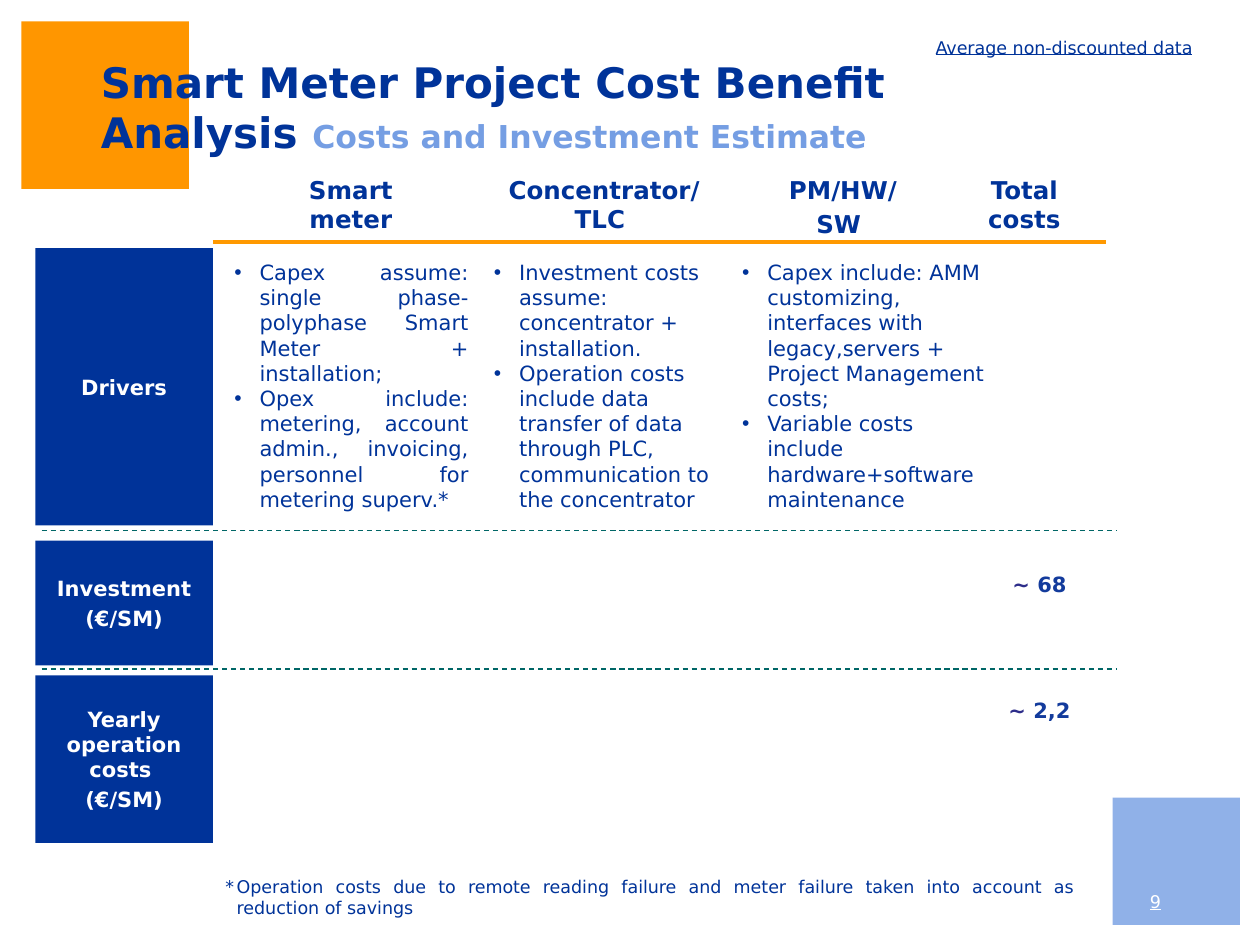
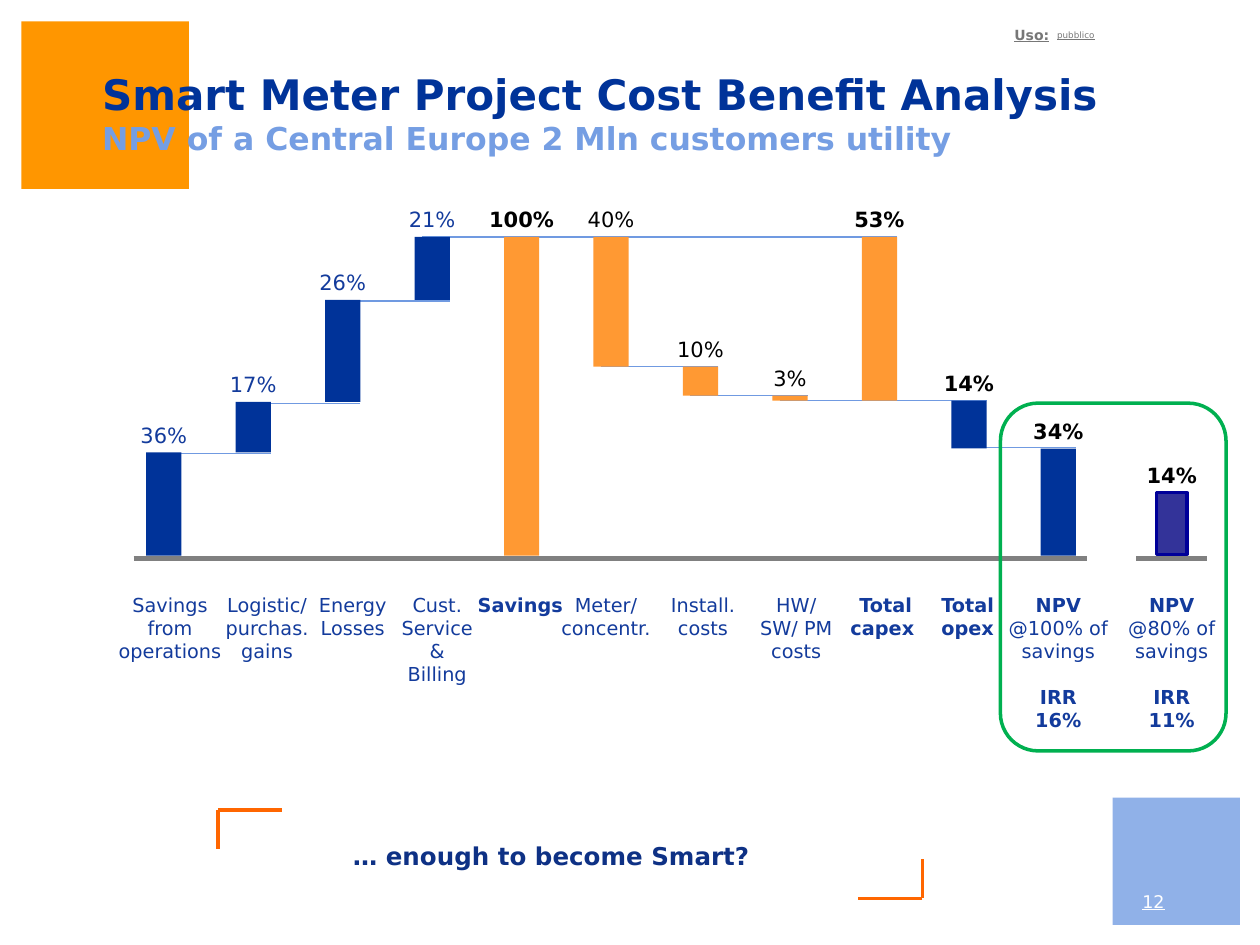
from dataclasses import dataclass

from lxml.etree import SubElement
from pptx import Presentation
from pptx.dml.color import RGBColor
from pptx.enum.dml import MSO_LINE
from pptx.enum.shapes import MSO_CONNECTOR, MSO_SHAPE as Shape
from pptx.enum.text import MSO_ANCHOR as Anchor, MSO_AUTO_SIZE as AutoSize, PP_ALIGN as Align
from pptx.oxml.ns import qn
from pptx.util import Inches, Pt


@dataclass(frozen=True)
class Theme:
    face: str = "DejaVu Sans"
    blue: str = "003399"
    sky: str = "759EE3"
    label: str = "133B9C"
    orange: str = "FF9600"
    rule: str = "FF9900"
    bar_orange: str = "FF9933"
    bracket: str = "FF6600"
    step: str = "709AE1"
    dash: str = "006666"
    axis: str = "808080"
    grey: str = "777777"
    indigo: str = "333399"
    navy: str = "000099"
    tilde: str = "2D2D8A"
    closing: str = "0E3185"
    green: str = "00B050"
    white: str = "FFFFFF"
    black: str = "000000"
    title: int = 24
    subtitle: int = 18
    head: int = 14
    body: int = 12
    category: int = 11
    small: int = 10


T = Theme()
BOLD, PLAIN = {"bold": True}, {"bold": False}
CENTRE = {"alignment": Align.CENTER}
NO_MARGIN = dict.fromkeys(("margin_left", "margin_right", "margin_top", "margin_bottom"), 0)
CELL_MARGIN = {"margin_left": Inches(0.06), "margin_right": Inches(0.06),
               "margin_top": Inches(0.01), "margin_bottom": Inches(0.01)}

# ---- Content -------------------------------------------------------------
TITLE = "Smart Meter Project Cost Benefit Analysis "

COST_HEADS = [  # left, width, lines
    (2.12, 1.33, ["Smart meter"]),
    (3.88, 1.83, ["Concentrator/ TLC "]),
    (5.94, 1.5, ["PM/HW/", "SW "]),
    (7.49, 1.28, ["Total costs"]),
]
COST_DRIVERS = [  # left, width, alignment, bullets
    (1.76, 2.06, Align.JUSTIFY, [
        "Capex assume: single phase-polyphase Smart Meter + installation; ",
        "Opex include: metering, account admin., invoicing, personnel for metering superv.*"]),
    (3.82, 1.97, Align.LEFT, [
        "Investment costs assume: concentrator + installation.",
        "Operation costs include data transfer of data through PLC, "
        "communication to the concentrator"]),
    (5.79, 2.2, Align.LEFT, [
        "Capex include: AMM customizing, interfaces with legacy,servers + "
        "Project Management costs;",
        "Variable costs include hardware+software maintenance"]),
]
COST_ROWS = [  # top, height, lines
    (1.97, 2.2, ["Drivers"]),
    (4.29, 0.99, ["Investment", "(€/SM)"]),
    (5.36, 1.33, ["Yearly operation costs ", "(€/SM)"]),
]
ROW_RULES = [4.21, 5.31]
TOTALS = [(4.49, "68"), (5.49, "2,2")]
FOOTNOTE = ("*\tOperation costs due to remote reading failure and meter failure "
            "taken into account as reduction of savings ")

NPV_FULL = [[("NPV ", BOLD), ("@100% of savings", PLAIN)], [("IRR", BOLD)], [("16%", BOLD)]]
NPV_PART = [[("NPV", BOLD)], ["@80% of savings"], [("IRR", BOLD)], [("11%", BOLD)]]
WATERFALL = [  # share, bar top, bar bottom, fill, key figure, category, its centre, its width
    ("36%", 3.59, 4.41, T.blue, False, "Savings from operations", 1.35, 1.18),
    ("17%", 3.19, 3.59, T.blue, False, "Logistic/ purchas. gains", 2.12, 0.93),
    ("26%", 2.38, 3.19, T.blue, False, "Energy Losses", 2.8, 0.93),
    ("21%", 1.88, 2.38, T.blue, False, "Cust. Service & Billing", 3.47, 0.79),
    ("100%", 1.88, 4.41, T.bar_orange, True, "Savings", 4.13, 0.93),
    ("40%", 1.88, 2.91, T.bar_orange, False, "Meter/ concentr.", 4.81, 0.93),
    ("10%", 2.91, 3.14, T.bar_orange, False, "Install. costs", 5.58, 0.93),
    ("3%", 3.14, 3.18, T.bar_orange, False, "HW/ SW/ PM costs", 6.32, 0.86),
    ("53%", 1.88, 3.18, T.bar_orange, True, "Total capex ", 7.03, 0.86),
    ("14%", 3.18, 3.56, T.blue, True, "Total opex", 7.68, 0.86),
    ("34%", 3.56, 4.41, T.blue, True, NPV_FULL, 8.4, 1.04),
]
STEPS = [(0, 1, 3.6), (1, 2, 3.2), (2, 3, 2.39), (3, 8, 1.88),  # first bar, last bar, level
         (5, 6, 2.91), (6, 7, 3.14), (7, 9, 3.18), (9, 10, 3.55)]
AXES = [(1.06, 8.63), (9.02, 9.58)]
AXIS_LEVEL = 4.43
BAR_LEFT, BAR_PITCH, BAR_WIDTH = 1.16, 0.71, 0.28
BRACKETS = [  # corner x, corner y, arm across, arm down
    (1.73, 6.43, 0.51, 0.31),
    (7.32, 7.13, -0.51, -0.31),
]


# ---- Helpers -------------------------------------------------------------
def rgb(colour):
    return RGBColor.from_string(colour)


def assign(target, values):
    for name, value in values.items():
        setattr(target, name, value)


def write(shape, paragraphs, size, colour, font=None, para=None, **frame_format):
    """Fill a shape; a paragraph is a string or a list of strings and (text, font values)."""
    frame = shape.text_frame
    assign(frame, {"word_wrap": True, "auto_size": AutoSize.NONE, **frame_format})
    for number, parts in enumerate(paragraphs):
        paragraph = frame.add_paragraph() if number else frame.paragraphs[0]
        assign(paragraph, {"space_before": Pt(0), **(para or {})})
        if not number:
            paragraph.space_before = Pt(0)
        for part in [parts] if isinstance(parts, str) else parts:
            text, own = (part, {}) if isinstance(part, str) else part
            look = {"name": T.face, "size": size, "color": colour, "bold": False,
                    **(font or {}), **own}
            run = paragraph.add_run()
            run.text = text
            run.font.color.rgb = rgb(look.pop("color"))
            look["size"] = Pt(look["size"])
            assign(run.font, look)
    return shape


def text_box(slide, at, paragraphs, size, colour, **options):
    box = slide.shapes.add_textbox(*map(Inches, at))
    return write(box, paragraphs, size, colour, **options)


def block(slide, at, fill=None, outline=None, kind=Shape.RECTANGLE):
    shape = slide.shapes.add_shape(kind, *map(Inches, at))
    shape.shadow.inherit = False
    if fill:
        shape.fill.solid()
        shape.fill.fore_color.rgb = rgb(fill)
    else:
        shape.fill.background()
    if outline:
        shape.line.color.rgb = rgb(outline)
        shape.line.width = Pt(2)
    else:
        shape.line.fill.background()
    return shape


def rule(slide, start, end, colour, width, dash=None):
    line = slide.shapes.add_connector(MSO_CONNECTOR.STRAIGHT, *map(Inches, start + end))
    assign(line.line, {"width": Pt(width), "dash_style": dash})
    line.line.color.rgb = rgb(colour)
    SubElement(line._element.spPr, qn("a:effectLst"))


def hang(paragraph, indent, bullet=None):
    """Hanging indent, led by a bullet or by a tab stop."""
    properties = paragraph._p.get_or_add_pPr()
    properties.set("marL", str(Inches(indent)))
    properties.set("indent", str(-Inches(indent)))
    if bullet:
        SubElement(properties, qn("a:buChar"), char=bullet)
    else:
        stops = SubElement(properties, qn("a:tabLst"))
        SubElement(stops, qn("a:tab"), pos=str(Inches(indent)), algn="l")


def place(placeholder, at):
    assign(placeholder, dict(zip(("left", "top", "width", "height"), map(Inches, at))))


def base_slide(deck, layout, title_at, subtitle, number, number_at):
    """Slide with the corner squares, the two-tone title and the page number."""
    slide = deck.slides.add_slide(deck.slide_layouts[layout])
    block(slide, (0.17, 0.17, 1.33, 1.33), T.orange)
    corner = block(slide, (8.83, 6.33, 1.01, 1.01), T.sky)
    tint = corner._element.spPr.find(".//" + qn("a:srgbClr"))
    SubElement(tint, qn("a:alpha"), val="80000")
    title = slide.shapes.title
    slide.shapes._spTree.append(title._element)
    place(title, title_at)
    write(title, [[TITLE, (subtitle, {"size": T.subtitle, "color": T.sky})]], T.title, T.blue,
          font=BOLD, para={"alignment": Align.LEFT}, vertical_anchor=Anchor.MIDDLE)
    text_box(slide, number_at, [number], T.small, T.white, font={"underline": True},
             para=CENTRE, vertical_anchor=Anchor.BOTTOM, word_wrap=False)
    return slide


# ---- Slides --------------------------------------------------------------
def cost_slide(deck):
    slide = base_slide(deck, 4, (0.7, 0.51, 8.08, 0.67), "Costs and Investment Estimate",
                       "9", (8.87, 6.7, 0.6, 0.59))
    text_box(slide, (7.28, 0.21, 2.33, 0.33), ["Average non-discounted data"], T.small, T.blue,
             font={"underline": True}, para=CENTRE, vertical_anchor=Anchor.MIDDLE, **CELL_MARGIN)
    for left, width, lines in COST_HEADS:
        text_box(slide, (left, 1.34, width, 0.5), lines, T.head, T.blue, font=BOLD,
                 para={**CENTRE, "space_before": Pt(2.8)})
    rule(slide, (1.69, 1.92), (8.78, 1.92), T.rule, 2.25)

    *bodies, spare = [p for p in slide.placeholders if p.placeholder_format.idx]
    spare._element.getparent().remove(spare._element)
    for body, (left, width, alignment, bullets) in zip(bodies, COST_DRIVERS):
        place(body, (left, 2.01, width, 2.32))
        write(body, bullets, T.body, T.blue, para={"alignment": alignment},
              vertical_anchor=Anchor.TOP)
        for paragraph in body.text_frame.paragraphs:
            hang(paragraph, 0.2, "•")

    for top, height, lines in COST_ROWS:
        write(block(slide, (0.28, top, 1.41, height), T.blue), lines, T.body, T.white, font=BOLD,
              para={**CENTRE, "space_before": Pt(2.4)}, vertical_anchor=Anchor.MIDDLE,
              **CELL_MARGIN)
    for level in ROW_RULES:
        rule(slide, (0.33, level), (8.86, level), T.dash, 0.75, MSO_LINE.DASH)
    for top, amount in TOTALS:
        text_box(slide, (7.9, top, 0.7, 0.3), [[("~ ", {"color": T.tilde}), amount]],
                 T.body, T.label, font=BOLD, para=CENTRE, word_wrap=False)
    footnote = text_box(slide, (1.69, 6.9, 6.93, 0.39), [FOOTNOTE], T.small, T.blue,
                        para={"alignment": Align.JUSTIFY})
    hang(footnote.text_frame.paragraphs[0], 0.09)


def share_label(slide, centre, bar_top, share, colour, bold):
    text_box(slide, (centre - 0.2, bar_top - 0.24, 0.4, 0.2), [share], T.body, colour,
             font={"bold": bold}, para=CENTRE, word_wrap=False, **NO_MARGIN)


def category_label(slide, centre, width, category, bold=False):
    lines = [category] if isinstance(category, str) else category
    label = text_box(slide, (centre - width / 2, 4.66, width, 0.3 if bold else 0.84), lines,
                     T.category, T.label, font={"bold": bold}, para=CENTRE)
    if len(lines) > 1:  # the IRR pair stands one line apart
        label.text_frame.paragraphs[-2].space_before = Pt(13)


def npv_slide(deck):
    slide = base_slide(deck, 5, (0.71, 0.56, 8.7, 0.67),
                       "NPV of a Central Europe 2 Mln customers utility",
                       "12", (8.94, 7, 0.43, 0.29))
    margins = {"margin_left": Inches(0.11), "margin_right": Inches(0.11)}
    text_box(slide, (7.94, 0.16, 0.6, 0.16), ["Uso:"], 8, T.grey,
             font={"bold": True, "underline": True}, **margins)
    text_box(slide, (8.28, 0.21, 1.58, 0.14), ["pubblico"], 5, T.grey,
             font={"underline": True}, para={"line_spacing": 0.7}, **margins)

    lefts = [BAR_LEFT + BAR_PITCH * i for i in range(len(WATERFALL))]
    for first, last, level in STEPS:
        rule(slide, (lefts[first] + 0.06, level), (lefts[last] + BAR_WIDTH, level), T.step, 0.75)
    for start, end in AXES:
        rule(slide, (start, AXIS_LEVEL), (end, AXIS_LEVEL), T.axis, 3)
    for left, (share, top, bottom, fill, key, category, centre, width) in zip(lefts, WATERFALL):
        block(slide, (left, top, BAR_WIDTH, bottom - top), fill)
        ink = T.black if key or fill == T.bar_orange else T.label
        share_label(slide, left + BAR_WIDTH / 2, top, share, ink, key)
        category_label(slide, centre, width, category, key and isinstance(category, str))

    block(slide, (9.18, 3.91, 0.24, 0.49), T.indigo, T.navy)
    share_label(slide, 9.3, 3.91, "14%", T.black, True)
    category_label(slide, 9.3, 1, NPV_PART)
    block(slide, (7.94, 3.2, 1.79, 2.76), outline=T.green, kind=Shape.ROUNDED_RECTANGLE)

    text_box(slide, (0.59, 6.35, 7.57, 0.89), ["… enough to become Smart?"], T.head, T.closing,
             font=BOLD, para=CENTRE, vertical_anchor=Anchor.MIDDLE, **NO_MARGIN)
    for x, y, across, down in BRACKETS:
        rule(slide, (x, y), (x + across, y), T.bracket, 2)
        rule(slide, (x, y), (x, y + down), T.bracket, 2)


def main():
    deck = Presentation()
    deck.slide_width, deck.slide_height = Inches(10), Inches(7.5)
    cost_slide(deck)
    npv_slide(deck)
    deck.save("out.pptx")


if __name__ == "__main__":
    main()
